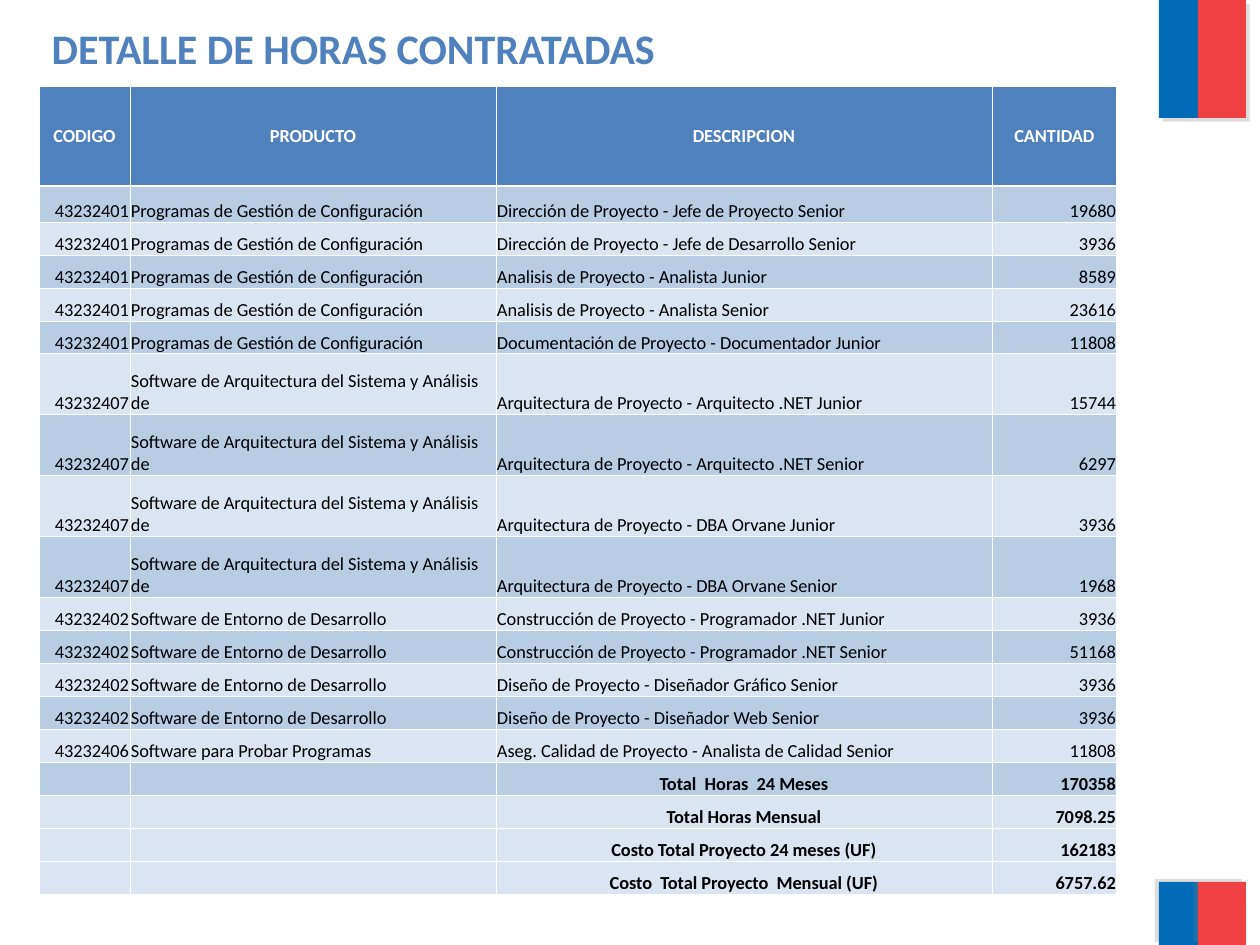
from dataclasses import dataclass

from lxml import etree
from pptx import Presentation
from pptx.dml import color
from pptx.enum import shapes, text
from pptx.oxml import ns
from pptx.util import Pt

PX = 914400 / 126
FONT = "Calibri"
BLUE, DARK, PALE = "4F81BD", "B8CCE4", "DBE5F1"
WHITE, BLACK = "FFFFFF", "000000"
LEFT, MID, RIGHT = text.PP_ALIGN.LEFT, text.PP_ALIGN.CENTER, text.PP_ALIGN.RIGHT


@dataclass
class Bar:
    x: int
    y: int
    w: int
    h: int
    fill: str
    angle: int


@dataclass
class Look:
    fill: str
    ink: str
    bold: bool
    anchor: text.MSO_ANCHOR
    aligns: tuple


BARS = [
    Bar(1159, -1, 39, 119, "006CB7", 45),
    Bar(1198, 0, 48, 118, "EF4144", 45),
    Bar(1159, 882, 39, 63, "006CB7", 215),
    Bar(1198, 882, 48, 63, "EF4144", 215),
]
WIDTHS = [91, 366, 496, 125]
HEADS = ("CODIGO", "PRODUCTO", "DESCRIPCION", "CANTIDAD")
GROUPS = [
    ("43232401", "Programas de Gestión de Configuración", 33, [
        ("Dirección de Proyecto - Jefe de Proyecto Senior", "19680"),
        ("Dirección de Proyecto - Jefe de Desarrollo Senior", "3936"),
        ("Analisis de Proyecto - Analista Junior", "8589"),
        ("Analisis de Proyecto - Analista Senior", "23616"),
        ("Documentación de Proyecto - Documentador Junior", "11808"),
    ]),
    ("43232407", "Software de Arquitectura del Sistema y Análisis de", 61, [
        ("Arquitectura de Proyecto - Arquitecto .NET Junior", "15744"),
        ("Arquitectura de Proyecto - Arquitecto .NET Senior", "6297"),
        ("Arquitectura de Proyecto - DBA Orvane Junior", "3936"),
        ("Arquitectura de Proyecto - DBA Orvane Senior", "1968"),
    ]),
    ("43232402", "Software de Entorno de Desarrollo", 33, [
        ("Construcción de Proyecto - Programador .NET Junior", "3936"),
        ("Construcción de Proyecto - Programador .NET Senior", "51168"),
        ("Diseño de Proyecto - Diseñador Gráfico Senior", "3936"),
        ("Diseño de Proyecto - Diseñador Web Senior", "3936"),
    ]),
    ("43232406", "Software para Probar Programas", 33, [
        ("Aseg. Calidad de Proyecto - Analista de Calidad Senior", "11808"),
    ]),
    ("", "", 33, [
        ("Total  Horas  24 Meses", "170358"),
        ("Total Horas Mensual", "7098.25"),
        ("Costo Total Proyecto 24 meses (UF)", "162183"),
        ("Costo  Total Proyecto  Mensual (UF)", "6757.62"),
    ]),
]


def px(n: int) -> int:
    return round(n * PX)


def rgb(code: str) -> color.RGBColor:
    return color.RGBColor.from_string(code)


def style(par, size: float, ink: str, bold: bool) -> None:
    for run in par.runs:
        font = run.font
        font.name, font.size, font.bold = FONT, Pt(size), bold
        font.color.rgb = rgb(ink)


def add_bar(slide, bar: Bar) -> None:
    box = slide.shapes.add_shape(
        shapes.MSO_SHAPE.RECTANGLE, px(bar.x), px(bar.y), px(bar.w), px(bar.h))
    box.fill.solid()
    box.fill.fore_color.rgb = rgb(bar.fill)
    box.line.fill.background()
    box.shadow.inherit = False
    glow = etree.SubElement(
        box._element.spPr.find(ns.qn("a:effectLst")), ns.qn("a:outerShdw"),
        dist=str(Pt(3)), dir=str(bar.angle * 60000), algn="ctr", rotWithShape="0")
    tone = etree.SubElement(glow, ns.qn("a:srgbClr"), val="808080")
    etree.SubElement(tone, ns.qn("a:alpha"), val="25000")


def add_title(slide) -> None:
    title = slide.shapes.title
    title.left, title.top, title.width, title.height = map(px, (39, 16, 1152, 63))
    frame = title.text_frame
    frame.text = "DETALLE DE HORAS CONTRATADAS"
    frame.word_wrap = True
    frame.auto_size = text.MSO_AUTO_SIZE.SHAPE_TO_FIT_TEXT
    frame.vertical_anchor = text.MSO_ANCHOR.TOP
    par = frame.paragraphs[0]
    par.alignment = LEFT
    style(par, 24, BLUE, True)


def rule(cell, side: str, width: float) -> None:
    line = etree.SubElement(
        cell._tc.get_or_add_tcPr(), ns.qn(f"a:ln{side}"), w=str(Pt(width)))
    fill = etree.SubElement(line, ns.qn("a:solidFill"))
    etree.SubElement(fill, ns.qn("a:srgbClr"), val=WHITE)


def fill_row(grid, row: int, words: tuple, look: Look) -> None:
    top, low = (1.5 if row == 1 else 0.5), (1.5 if row == 0 else 0.5)
    for col, (word, align) in enumerate(zip(words, look.aligns)):
        cell = grid.cell(row, col)
        for side, width in (("L", 0.5), ("R", 0.5), ("T", top), ("B", low)):
            rule(cell, side, width)
        cell.fill.solid()
        cell.fill.fore_color.rgb = rgb(look.fill)
        cell.margin_left = cell.margin_right = cell.margin_top = px(1)
        cell.margin_bottom = 0
        cell.vertical_anchor = look.anchor
        par = cell.text_frame.paragraphs[0]
        par.text = word
        par.alignment = align
        par._p.get_or_add_endParaRPr().set("sz", "1050")
        style(par, 10.5, look.ink, look.bold)


def add_hours(slide) -> None:
    rows = [(code, name, task, count, high)
            for code, name, high, tasks in GROUPS for task, count in tasks]
    highs = [100, 36] + [row[-1] for row in rows[1:]]
    grid = slide.shapes.add_table(
        len(highs), len(WIDTHS), px(39), px(86), px(sum(WIDTHS)), px(sum(highs))).table
    for col, width in zip(grid.columns, WIDTHS):
        col.width = px(width)
    for row, high in zip(grid.rows, highs):
        row.height = px(high)
    fill_row(grid, 0, HEADS, Look(BLUE, WHITE, True, text.MSO_ANCHOR.MIDDLE, (MID,) * 4))
    for i, (*words, _) in enumerate(rows, 1):
        total = not words[0]
        tint = DARK if i % 2 and i < 17 else PALE
        aligns = (RIGHT, LEFT, MID if total else LEFT, RIGHT)
        fill_row(grid, i, words, Look(tint, BLACK, total, text.MSO_ANCHOR.BOTTOM, aligns))


def main() -> None:
    """Build the slide of contracted hours."""
    deck = Presentation()
    deck.slide_width, deck.slide_height = px(1260), px(945)
    slide = deck.slides.add_slide(deck.slide_layouts[5])
    for bar in BARS:
        add_bar(slide, bar)
    add_title(slide)
    add_hours(slide)
    deck.save("out.pptx")


if __name__ == "__main__":
    main()
